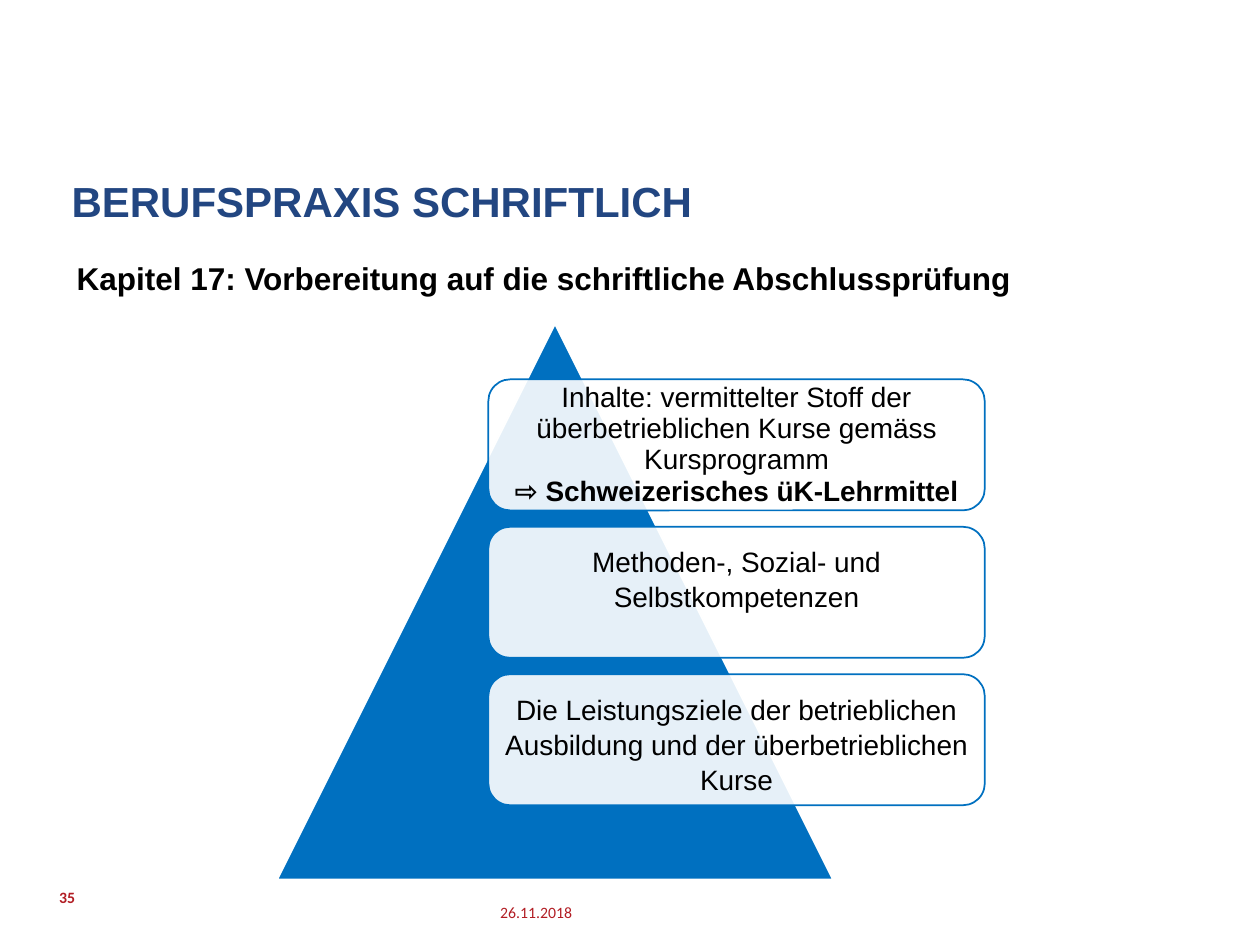
"""Build the exam preparation slide with a triangle and three topic cards."""
from lxml import etree
from pptx import Presentation
from pptx.dml.color import RGBColor
from pptx.enum.shapes import MSO_SHAPE
from pptx.enum.text import MSO_ANCHOR, PP_ALIGN
from pptx.oxml.ns import qn
from pptx.util import Inches, Pt

TRIANGLE, CARD = MSO_SHAPE.ISOSCELES_TRIANGLE, MSO_SHAPE.ROUNDED_RECTANGLE
TOP, MIDDLE = MSO_ANCHOR.TOP, MSO_ANCHOR.MIDDLE
LEFT, CENTER, RIGHT = PP_ALIGN.LEFT, PP_ALIGN.CENTER, PP_ALIGN.RIGHT
NAVY = RGBColor(0x22, 0x46, 0x81)
BLUE = RGBColor(0x00, 0x70, 0xC0)
RED = RGBColor(0xB2, 0x1D, 0x24)
BLACK = RGBColor(0, 0, 0)
WHITE = RGBColor(255, 255, 255)

WIDTH, HEIGHT = 10, 7.5
TRIANGLE_LEFT, TRIANGLE_TOP, TRIANGLE_SIDE = 2.2, 2.57, 4.41
CARD_LEFT = TRIANGLE_LEFT + 0.38 * TRIANGLE_SIDE
CARD_TOP = TRIANGLE_TOP + 0.1 * TRIANGLE_SIDE
CARD_WIDTH, CARD_HEIGHT, CARD_GAP = 3.94, 1.04, 0.13
SIDE_INSET = 0.05
OPACITY = 90

LABELS = [
    {"text": "BERUFSPRAXIS SCHRIFTLICH", "area": (0.47, 1.39, 7.64, 0.94),
     "font": ("Arial", 24, True, NAVY), "align": LEFT, "anchor": TOP,
     "insets": (0.1, 0.05), "spacing": 0.9, "wrap": True},
    {"text": "Kapitel 17: Vorbereitung auf die schriftliche Abschlussprüfung",
     "area": (0.51, 2.01, 7.69, 0.4), "font": ("Arial", 18, True, BLACK),
     "align": LEFT, "anchor": TOP, "insets": (0.1, 0.05), "spacing": 1,
     "wrap": False},
    {"text": "26.11.2018", "area": (2.87, 7.04, 1.67, 0.4),
     "font": ("Calibri", 9, False, RED), "align": RIGHT, "anchor": MIDDLE,
     "insets": (0, 0), "spacing": 1, "wrap": True},
    {"text": "35", "area": (0.47, 6.92, 2.25, 0.4),
     "font": ("Calibri", 9, True, RED), "align": LEFT, "anchor": MIDDLE,
     "insets": (0, 0), "spacing": 1, "wrap": True},
]
CARDS = [
    {"lines": [("Inhalte: vermittelter Stoff der überbetrieblichen Kurse "
                "gemäss Kursprogramm", False),
               ("⇨ Schweizerisches üK-Lehrmittel", True)],
     "spacing": 0.93, "insets": (0, 0)},
    {"lines": [("Methoden-, Sozial- und Selbstkompetenzen", False)],
     "spacing": 1.04, "insets": (0, 0.22)},
    {"lines": [("Die Leistungsziele der betrieblichen Ausbildung und der "
                "überbetrieblichen Kurse", False)],
     "spacing": 1.04, "insets": (0.06, 0)},
]


def set_frame(frame, anchor, side, top, bottom, wrap=True):
    frame.word_wrap = wrap
    frame.vertical_anchor = anchor
    frame.margin_left = frame.margin_right = Inches(side)
    frame.margin_top, frame.margin_bottom = Inches(top), Inches(bottom)


def add_span(para, text, name, size, bold, color):
    span = para.add_run()
    span.text = text
    span.font.name, span.font.size, span.font.bold = name, Pt(size), bold
    span.font.color.rgb = color


def add_label(page, label):
    box = page.shapes.add_textbox(*map(Inches, label["area"]))
    side, edge = label["insets"]
    set_frame(box.text_frame, label["anchor"], side, edge, edge, label["wrap"])
    para = box.text_frame.paragraphs[0]
    para.alignment, para.line_spacing = label["align"], label["spacing"]
    add_span(para, label["text"], *label["font"])


def add_figure(page, kind, area, fill, line):
    shape = page.shapes.add_shape(kind, *map(Inches, area))
    shape.shadow.inherit = False
    shape.fill.solid()
    shape.fill.fore_color.rgb = fill
    shape.line.color.rgb = line
    shape.line.width = Pt(1)
    return shape


def add_card(page, row, card):
    top = CARD_TOP + row * (CARD_HEIGHT + CARD_GAP)
    shape = add_figure(page, CARD, (CARD_LEFT, top, CARD_WIDTH, CARD_HEIGHT),
                       WHITE, BLUE)
    color = shape.fill._xPr.find(qn("a:solidFill"))[0]
    etree.SubElement(color, qn("a:alpha"), val=str(OPACITY * 1000))
    set_frame(shape.text_frame, MIDDLE, SIDE_INSET, *card["insets"])
    para = shape.text_frame.paragraphs[0]
    para.alignment, para.line_spacing = CENTER, card["spacing"]
    for index, (text, bold) in enumerate(card["lines"]):
        if index:
            para.add_line_break()
        add_span(para, text, "Arial", 16, bold, BLACK)


def main():
    deck = Presentation()
    deck.slide_width, deck.slide_height = Inches(WIDTH), Inches(HEIGHT)
    page = deck.slides.add_slide(deck.slide_layouts[6])
    add_figure(page, TRIANGLE, (TRIANGLE_LEFT, TRIANGLE_TOP, TRIANGLE_SIDE,
                                TRIANGLE_SIDE), BLUE, WHITE)
    for row, card in enumerate(CARDS):
        add_card(page, row, card)
    for label in LABELS:
        add_label(page, label)
    deck.save("out.pptx")


if __name__ == "__main__":
    main()
